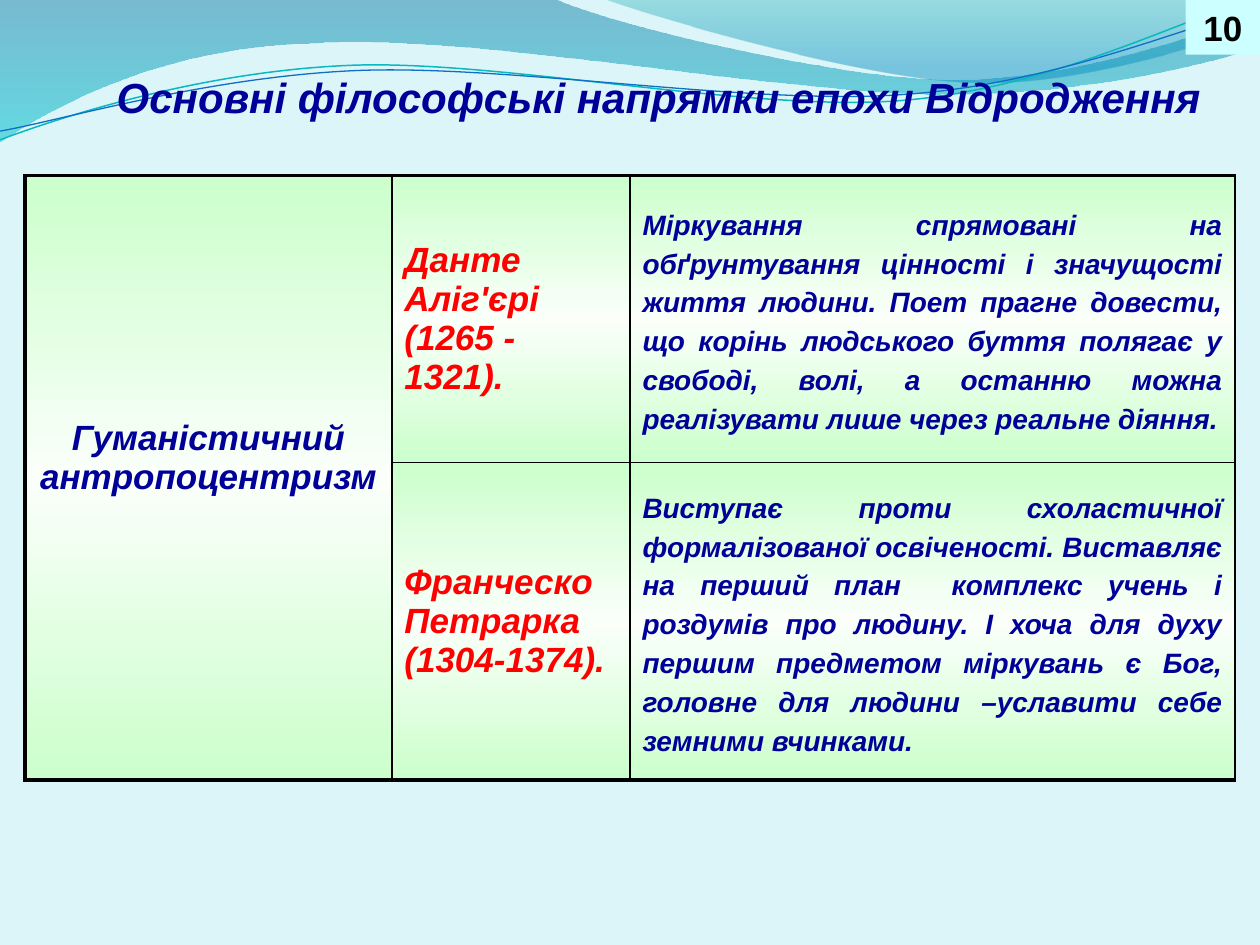
from lxml.etree import SubElement
from pptx import Presentation
from pptx.dml.color import RGBColor
from pptx.enum.shapes import MSO_SHAPE
from pptx.enum.text import MSO_ANCHOR as Anchor, MSO_AUTO_SIZE as AutoSize, PP_ALIGN as Align
from pptx.oxml.ns import qn
from pptx.util import Pt

BLACK = RGBColor(0x00, 0x00, 0x00)
NAVY = RGBColor(0x00, 0x00, 0x99)
RED = RGBColor(0xFF, 0x00, 0x00)
PAGE_FILL = RGBColor(0xDB, 0xF5, 0xF9)
NUMBER_FILL = RGBColor(0xCC, 0xFF, 0xFF)
MINT = RGBColor(0xCC, 0xFF, 0xCC)
PALE_MINT = RGBColor(0xFA, 0xFF, 0xFA)
DEEP_BLUE = RGBColor(0x00, 0x74, 0xA1)
CYAN = RGBColor(0x00, 0xC6, 0xCF)
TEAL = RGBColor(0x00, 0xA1, 0xA9)
SKY = RGBColor(0x00, 0x8B, 0xBF)
TEAL_LINE = RGBColor(0x0A, 0xB8, 0xBF)
BLUE_LINE = RGBColor(0x0F, 0x6F, 0xC6)

# Gradient stops: position, colour, opacity (percent)
CELL_STOPS = [(0, MINT, 100), (50, PALE_MINT, 100), (100, MINT, 100)]
LEFT_WAVE_STOPS = [(0, DEEP_BLUE, 45), (100, CYAN, 55)]
RIGHT_WAVE_STOPS = [(0, TEAL, 30), (80, SKY, 45)]

# Outlines in points: each step is one point (straight) or three (Bezier)
LEFT_WAVE = [
    [(0, 0)], [(316.8, -0.7)],
    [(342.7, 12.2), (478.1, 45.4), (545.8, 45.4)],
    [(614.2, 45.4), (689.8, 18.7), (720, 6.5)],
    [(720.7, 25.9)],
    [(707.8, 31.7), (626.4, 54.7), (537.1, 54)],
    [(447.8, 54), (275, 20.2), (185, 24.5)],
    [(92.9, 25.9), (33.1, 59.8), (-0.7, 81.4)],
]
RIGHT_WAVE = [
    [(344.9, -0.7)],
    [(366.5, 7.9), (491, 44.6), (553.7, 46.8)],
    [(616.3, 49.7), (691.9, 23), (720, 15.1)],
    [(720, 0)],
]
TEAL_CURVE = [
    [(0, 79.9)],
    [(34.6, 67), (113.8, 41), (199.4, 37.4)],
    [(284.4, 33.8), (427, 64.1), (513.4, 57.6)],
    [(599.8, 51.1), (675.4, 10.8), (718.6, -1.4)],
]
BLUE_CURVE = [
    [(0, 74.9)],
    [(33.8, 69.1), (118.1, 43.9), (203.8, 40.3)],
    [(290.2, 36.7), (429.8, 60.5), (516.2, 54)],
    [(601.9, 48.2), (677.5, 15.1), (720, 4.3)],
]

TITLE = "Основні філософські напрямки епохи Відродження"
MOVEMENT = "Гуманістичний антропоцентризм"
THINKERS = [
    ("Данте Аліг'єрі (1265 - 1321).",
     "Міркування спрямовані на обґрунтування цінності і значущості життя людини. "
     "Поет прагне довести, що корінь людського буття полягає у свободі, волі, "
     "а останню можна реалізувати лише через реальне діяння."),
    ("Франческо Петрарка (1304-1374).",
     "Виступає проти схоластичної формалізованої освіченості. Виставляє на перший "
     "план  комплекс учень і роздумів про людину. І хоча для духу першим предметом "
     "міркувань є Бог, головне для людини –уславити себе земними вчинками."),
]
COLUMN_WIDTHS = [209.5, 136.1, 345.8]
ROW_HEIGHTS = [164, 181.6]


def write_text(frame, text, size=20, color=NAVY, italic=True, align=Align.LEFT,
               before=0, spacing=1.0):
    para = frame.paragraphs[0]
    para.alignment, para.line_spacing = align, spacing
    para.space_before = Pt(before)
    span = para.add_run()
    span.text = text
    font = span.font
    font.name, font.size, font.bold, font.italic = "Arial", Pt(size), True, italic
    font.color.rgb = color


def fill_gradient(fill, element, stops):
    """Fill from top to bottom; element is the XML that holds the fill."""
    fill.gradient()
    gradient = element.find(".//" + qn("a:gradFill"))
    gradient.clear()
    stop_list = SubElement(gradient, qn("a:gsLst"))
    for position, color, opacity in stops:
        stop = SubElement(stop_list, qn("a:gs"), pos=str(position * 1000))
        tint = SubElement(stop, qn("a:srgbClr"), val=str(color))
        if opacity < 100:
            SubElement(tint, qn("a:alpha"), val=str(opacity * 1000))
    SubElement(gradient, qn("a:lin"), ang="5400000", scaled="0")


def add_outline(page, outline, close):
    """Build the outline on its end points, then bend its Bezier steps."""
    ends = [(Pt(x), Pt(y)) for x, y in (step[-1] for step in outline)]
    builder = page.shapes.build_freeform(*ends[0])
    builder.add_line_segments(ends[1:], close=close)
    shape = builder.convert_to_shape()
    shape.shadow.inherit = False
    segments = list(shape._element.iter(qn("a:lnTo")))
    for segment, step in zip(segments, outline[1:]):
        if len(step) == 3:
            curve = SubElement(segment.getparent(), qn("a:cubicBezTo"))
            for x, y in step:
                SubElement(curve, qn("a:pt"), x=str(Pt(x) - shape.left), y=str(Pt(y) - shape.top))
            segment.getparent().replace(segment, curve)
    return shape


def add_wave(page, outline, stops):
    wave = add_outline(page, outline, close=True)
    fill_gradient(wave.fill, wave._element.spPr, stops)
    wave.line.fill.background()


def add_curve(page, outline, color, width):
    curve = add_outline(page, outline, close=False)
    curve.fill.background()
    curve.line.color.rgb, curve.line.width = color, Pt(width)


def set_borders(cell, **widths):
    properties = cell._tc.get_or_add_tcPr()
    for index, side in enumerate("LRTB"):
        line = SubElement(properties, qn("a:ln" + side), w=str(Pt(widths[side])))
        SubElement(SubElement(line, qn("a:solidFill")), qn("a:srgbClr"), val=str(BLACK))
        properties.insert(index, line)


def add_thinkers_table(page):
    rows, columns = len(ROW_HEIGHTS), len(COLUMN_WIDTHS)
    table = page.shapes.add_table(rows, columns, Pt(14.4), Pt(100.2),
                                  Pt(sum(COLUMN_WIDTHS)), Pt(sum(ROW_HEIGHTS))).table
    table.first_row = table.horz_banding = False
    for column, width in zip(table.columns, COLUMN_WIDTHS):
        column.width = Pt(width)
    for row, height in zip(table.rows, ROW_HEIGHTS):
        row.height = Pt(height)
    movement = table.cell(0, 0)
    movement.merge(table.cell(rows - 1, 0))
    for r in range(rows):
        for c in range(columns):
            cell = table.cell(r, c)
            at_bottom = c == 0 or r == rows - 1
            cell.vertical_anchor = Anchor.MIDDLE
            fill_gradient(cell.fill, cell._tc, CELL_STOPS)
            set_borders(cell, L=2.25 if c == 0 else 1, R=1,
                        T=2.25 if r == 0 else 1, B=2.25 if at_bottom else 1)
    movement.margin_bottom = Pt(26)  # lifts the text above the middle
    write_text(movement.text_frame, MOVEMENT, align=Align.CENTER)
    for r, (name, idea) in enumerate(THINKERS):
        write_text(table.cell(r, 1).text_frame, name, color=RED, before=4)
        write_text(table.cell(r, 2).text_frame, idea, size=16, align=Align.JUSTIFY, spacing=1.25)


def set_title(page):
    title = page.shapes.title
    page.shapes._spTree.append(title._element)  # in front of the waves
    title.left, title.top, title.width, title.height = Pt(59.5), Pt(37.4), Pt(634.3), Pt(36)
    frame = title.text_frame
    frame.word_wrap, frame.auto_size = False, AutoSize.NONE
    frame.vertical_anchor = Anchor.TOP
    write_text(frame, TITLE, size=24)


def add_page_number(page):
    box = page.shapes.add_shape(MSO_SHAPE.RECTANGLE, Pt(677.5), 0, Pt(42.5), Pt(31.2))
    box.shadow.inherit = False
    box.fill.solid()
    box.fill.fore_color.rgb = NUMBER_FILL
    box.line.fill.background()
    write_text(box.text_frame, "10", color=BLACK, italic=False, align=Align.CENTER)


def main():
    deck = Presentation()
    deck.slide_width, deck.slide_height = Pt(720), Pt(540)
    page = deck.slides.add_slide(deck.slide_layouts[5])
    page.background.fill.solid()
    page.background.fill.fore_color.rgb = PAGE_FILL
    add_wave(page, LEFT_WAVE, LEFT_WAVE_STOPS)
    add_wave(page, RIGHT_WAVE, RIGHT_WAVE_STOPS)
    add_curve(page, TEAL_CURVE, TEAL_LINE, 0.85)
    add_curve(page, BLUE_CURVE, BLUE_LINE, 0.75)
    add_thinkers_table(page)
    set_title(page)
    add_page_number(page)
    deck.save("out.pptx")


if __name__ == "__main__":
    main()
